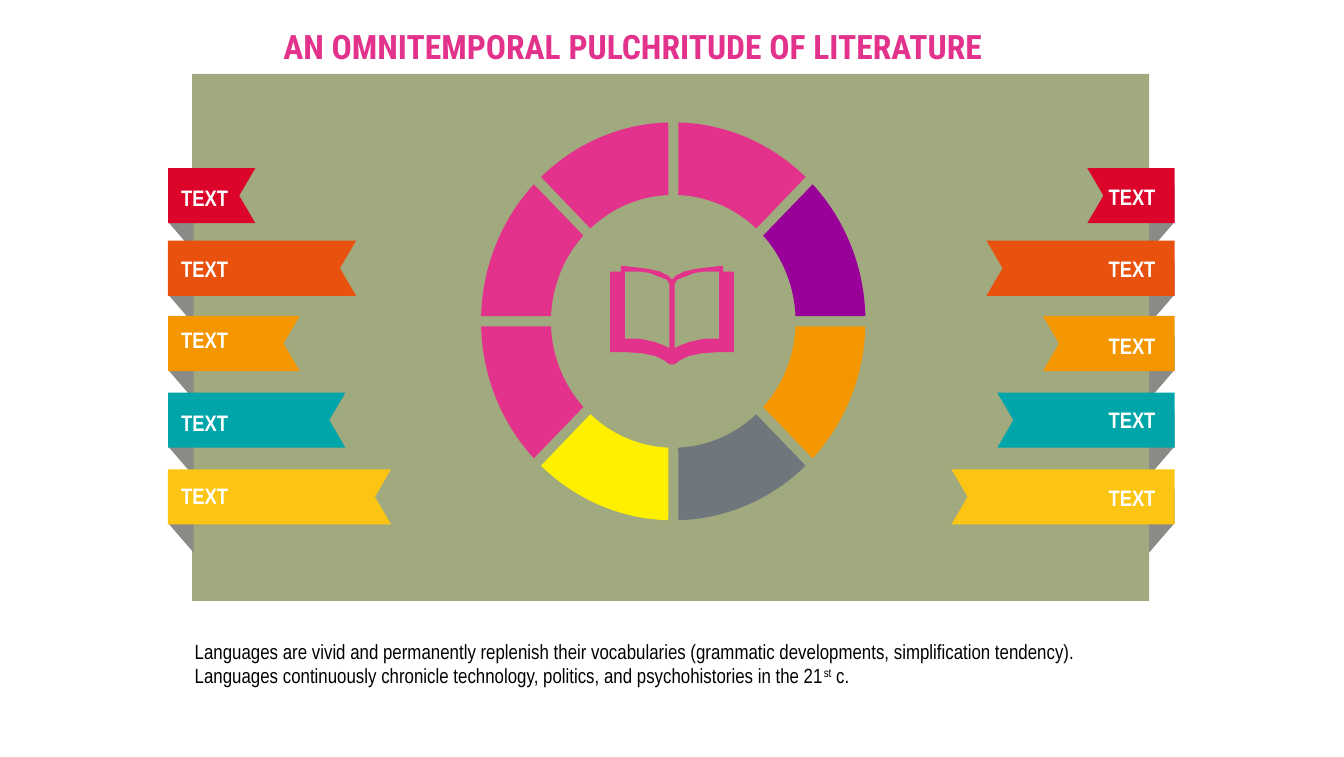
"""Build a slide with a segmented ring, a book symbol and two columns of ribbons."""
from dataclasses import dataclass
from math import cos, radians, sin

from pptx import Presentation
from pptx.dml.color import RGBColor
from pptx.enum.shapes import MSO_SHAPE
from pptx.enum.text import MSO_AUTO_SIZE
from pptx.util import Inches, Pt

RECTANGLE = MSO_SHAPE.RECTANGLE
FIT_SHAPE = MSO_AUTO_SIZE.SHAPE_TO_FIT_TEXT
PINK, ORANGE, WHITE = "E3328C", "F49600", "FFFFFF"
FOLD_GREY, OLIVE, BLACK = "898B86", "A1AA7E", "000000"
BODY_FONT, TITLE_FONT = "Arial Narrow", "Roboto Condensed"

MIRROR_SUM = 9.99
RIBBON_LEFT, RIBBON_HEIGHT, NOTCH = 1.25, 0.41, 0.12
FOLD_WIDTH = 0.19
LABEL_LEFT, LABEL_RIGHT = 1.25, 8.15

RING_X, RING_Y = 5.01, 2.39
OUTER, INNER = (1.43, 1.48), (0.91, 0.94)
OUTER_TRIM, INNER_TRIM = 1.5, 2.3
RING_COLORS = ["990099", PINK, PINK, PINK, PINK, "FFF000", "6F777D", ORANGE]

BOOK_X = 5.0
COVER = [(0, 2.08), (0.03, 2.05), (0.09, 2.02), (0.18, 2), (0.26, 1.99), (0.34, 1.98),
         (0.38, 1.98), (0.38, 2.02), (0.46, 2.02), (0.46, 2.62), (0.33, 2.62),
         (0.21, 2.63), (0.12, 2.65), (0.06, 2.68), (0.02, 2.71)]
PAGE = [(0.35, 2.02), (0.25, 2.02), (0.17, 2.03), (0.09, 2.06), (0.04, 2.08), (0.02, 2.11),
        (0.02, 2.59), (0.06, 2.57), (0.14, 2.54), (0.24, 2.52), (0.35, 2.52)]

Point = tuple[float, float]


@dataclass
class Ribbon:
    top: float
    width: float
    color: str
    left_label_top: float
    right_label_top: float


@dataclass
class Run:
    text: str
    size: float
    font: str
    color: str
    bold: bool = False
    superscript: bool = False


RIBBONS = [
    Ribbon(1.25, 0.65, "DC042B", 1.32, 1.31),
    Ribbon(1.79, 1.4, "E9510E", 1.85, 1.85),
    Ribbon(2.35, 0.98, ORANGE, 2.38, 2.42),
    Ribbon(2.92, 1.32, "00A5A9", 2.99, 2.97),
    Ribbon(3.49, 1.66, "FCC513", 3.54, 3.55),
]


def rgb(color: str) -> RGBColor:
    return RGBColor.from_string(color)


def paint(sp, color: str) -> None:
    sp.shadow.inherit = False
    sp.fill.solid()
    sp.fill.fore_color.rgb = rgb(color)
    sp.line.fill.background()


def mirror(points: list[Point]) -> list[Point]:
    return [(MIRROR_SUM - x, y) for x, y in points]


def draw_outline(s, color: str, *contours: list[Point]) -> None:
    contours = [[(Inches(x), Inches(y)) for x, y in points] for points in contours]
    builder = s.shapes.build_freeform(*contours[0][0])
    for i, points in enumerate(contours):
        if i:
            builder.move_to(*points[0])
        builder.add_line_segments(points[1:], close=True)
    paint(builder.convert_to_shape(), color)


def add_text(s, left: float, top: float, width: float, height: float,
             runs: list[Run], wrap: bool = True) -> None:
    box = s.shapes.add_textbox(Inches(left), Inches(top), Inches(width), Inches(height))
    tf = box.text_frame
    tf.word_wrap = wrap
    tf.auto_size = FIT_SHAPE
    p = tf.paragraphs[0]
    for run in runs:
        r = p.add_run()
        r.text = run.text
        r.font.size = Pt(run.size)
        r.font.name = run.font
        r.font.bold = run.bold
        r.font.color.rgb = rgb(run.color)
        if run.superscript:
            r._r.get_or_add_rPr().set("baseline", "30000")


def fold_points(ribbon: Ribbon) -> list[Point]:
    outer, inner, top = RIBBON_LEFT, RIBBON_LEFT + FOLD_WIDTH, ribbon.top
    return [(outer, top + 0.4), (inner, top + 0.62), (inner, top + 0.09), (outer, top + 0.15)]


def ribbon_points(ribbon: Ribbon) -> list[Point]:
    tip, top = RIBBON_LEFT + ribbon.width, ribbon.top
    bottom = top + RIBBON_HEIGHT
    return [(RIBBON_LEFT, bottom), (RIBBON_LEFT, top), (tip, top),
            (tip - NOTCH, (top + bottom) / 2), (tip, bottom)]


def arc(radii: Point, start: float, end: float, steps: int = 24) -> list[Point]:
    angles = [radians(start + (end - start) * i / steps) for i in range(steps + 1)]
    return [(RING_X + radii[0] * cos(a), RING_Y - radii[1] * sin(a)) for a in angles]


def draw_ribbons(s) -> None:
    for points_of, fold in ((fold_points, True), (ribbon_points, False)):
        for ribbon in RIBBONS:
            points = points_of(ribbon)
            color = FOLD_GREY if fold else ribbon.color
            draw_outline(s, color, points)
            draw_outline(s, color, mirror(points))


def draw_labels(s) -> None:
    label = [Run("TEXT", 12, BODY_FONT, WHITE, bold=True)]
    for ribbon in RIBBONS:
        add_text(s, LABEL_LEFT, ribbon.left_label_top, 0.65, 0.3, label)
        add_text(s, LABEL_RIGHT, ribbon.right_label_top, 0.65, 0.3, label)


def draw_ring(s) -> None:
    for i, color in enumerate(RING_COLORS):
        start, end = 45 * i, 45 * (i + 1)
        outside = arc(OUTER, start + OUTER_TRIM, end - OUTER_TRIM)
        inside = arc(INNER, end - INNER_TRIM, start + INNER_TRIM)
        draw_outline(s, color, outside + inside)


def draw_book(s) -> None:
    right_cover = [(BOOK_X + x, y) for x, y in COVER]
    left_cover = [(BOOK_X - x, y) for x, y in reversed(COVER[1:])]
    pages = [[(BOOK_X + side * x, y) for x, y in PAGE] for side in (1, -1)]
    draw_outline(s, PINK, right_cover + left_cover, *pages)


def main() -> None:
    prs = Presentation()
    prs.slide_width, prs.slide_height = Inches(10), Inches(5.63)
    s = prs.slides.add_slide(prs.slide_layouts[6])
    panel = s.shapes.add_shape(RECTANGLE, Inches(1.43), Inches(0.55), Inches(7.12), Inches(3.92))
    paint(panel, OLIVE)
    draw_ribbons(s)
    draw_ring(s)
    add_text(s, 2.01, 0.14, 6.56, 0.4, [
        Run("AN OMNITEMPORAL PULCHRITUDE OF LITERATURE", 18, TITLE_FONT, PINK, bold=True),
    ], wrap=False)
    add_text(s, 1.35, 4.7, 7.32, 0.66, [
        Run("Languages are vivid and permanently replenish their vocabularies "
            "(grammatic developments, simplification tendency). Languages continuously "
            "chronicle technology, politics, and psychohistories in the 21",
            11, BODY_FONT, BLACK),
        Run("st", 11, BODY_FONT, BLACK, superscript=True),
        Run(" c.", 11, BODY_FONT, BLACK),
    ])
    draw_labels(s)
    draw_book(s)
    prs.save("out.pptx")


if __name__ == "__main__":
    main()
